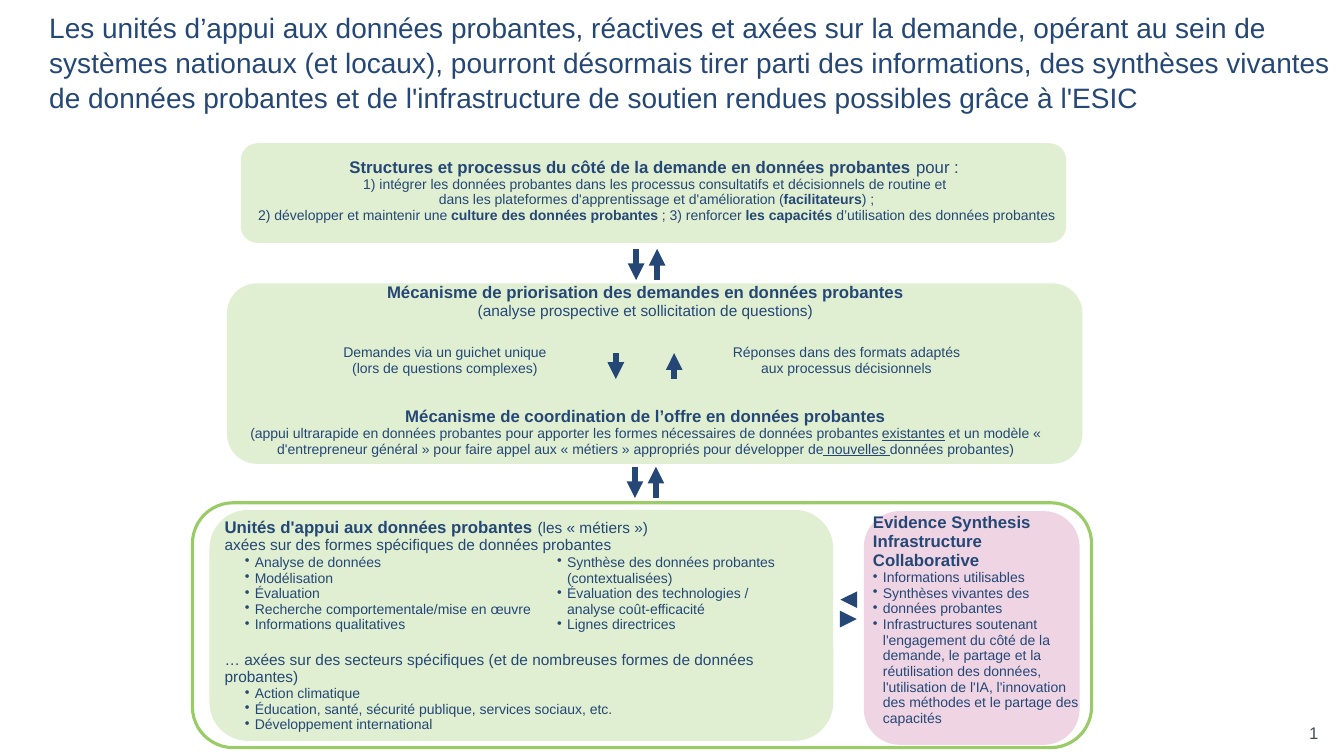
from copy import deepcopy
from dataclasses import dataclass

from lxml import etree
from pptx import Presentation
from pptx import util as u
from pptx.dml.color import RGBColor
from pptx.enum import shapes, text
from pptx.oxml import ns


@dataclass(frozen=True)
class Theme:
    """Colours, type sizes and font of the slide."""
    navy: str = "254776"
    title_navy: str = "244776"
    grey: str = "464F55"
    green: str = "99CC67"
    pink: str = "CC76A6"
    font: str = "Arial"
    title: int = 20
    head: int = 12
    sub: int = 11
    body: int = 10


@dataclass(frozen=True)
class Box:
    """A rectangle in centimetres."""
    x: float
    y: float
    w: float
    h: float

    def emu(self):
        """Return the rectangle as four lengths."""
        return [u.Cm(v) for v in (self.x, self.y, self.w, self.h)]


T = Theme()
PP = text.PP_ALIGN
NO_GRID = "{2D5ABB26-0587-4C30-8999-92F81FD0307C}"


def add_runs(p, runs, color=T.navy):
    """Add (text, size, style) runs to a paragraph; a newline breaks the line."""
    for content, size, style in runs:
        for i, part in enumerate(content.split("\n")):
            if i:
                p.add_line_break()
                p._p[-1].append(deepcopy(r._r.get_or_add_rPr()))
            if part or not i:
                r = p.add_run()
                r.text = part
                r.font.name, r.font.size = T.font, u.Pt(size)
                r.font.bold, r.font.underline = "b" in style, "u" in style
                r.font.color.rgb = RGBColor.from_string(color)


def write(tf, paragraphs, align=PP.LEFT):
    """Fill a text frame with (runs, indent) paragraphs; an indent means a bullet."""
    for i, (runs, indent) in enumerate(paragraphs):
        p = tf.paragraphs[0] if i == 0 else tf.add_paragraph()
        p.alignment = align
        if indent:
            pPr = p._p.get_or_add_pPr()
            pPr.set("marL", str(u.Cm(indent)))
            pPr.set("indent", str(-u.Cm(0.25)))
            etree.SubElement(pPr, ns.qn("a:buChar"), char="•")
        add_runs(p, runs)


def plain(*runs):
    """Return an unbulleted paragraph."""
    return list(runs), 0


def bullets(items, indent):
    """Return bulleted body paragraphs."""
    return [([(item, T.body, "")], indent) for item in items]


def add_panel(s, box, fill=None, line=None):
    """Draw a rounded panel, tinted or outlined."""
    sp = s.shapes.add_shape(shapes.MSO_SHAPE.ROUNDED_RECTANGLE, *box.emu())
    sp.shadow.inherit = False
    if fill:
        sp.fill.solid()
        sp.fill.fore_color.rgb = RGBColor.from_string(fill)
        color = next(sp._element.spPr.iter(ns.qn("a:srgbClr")))
        etree.SubElement(color, ns.qn("a:alpha"), val="30000")
    else:
        sp.fill.background()
    if line:
        sp.line.color.rgb = RGBColor.from_string(line)
        sp.line.width = u.Pt(2.25)
    else:
        sp.line.fill.background()


def add_grid(s, x, y, cols, rows):
    """Add a clear table without borders and return it."""
    box = Box(x, y, sum(cols), sum(rows))
    frame = s.shapes.add_table(len(rows), len(cols), *box.emu())
    next(frame._element.iter(ns.qn("a:tableStyleId"))).text = NO_GRID
    table = frame.table
    table.first_row = table.horz_banding = False
    for col, width in zip(table.columns, cols):
        col.width = u.Cm(width)
    for row, height in zip(table.rows, rows):
        row.height = u.Cm(height)
    for cell in table.iter_cells():
        cell.fill.background()
        cell.margin_left = cell.margin_right = u.Cm(0.05)
        cell.margin_top = cell.margin_bottom = 0
    return table


def add_arrow(s, x1, y1, x2, y2):
    """Draw an arrow to its second point."""
    c = s.shapes.add_connector(shapes.MSO_CONNECTOR.STRAIGHT,
                               *[u.Cm(v) for v in (x1, y1, x2, y2)])
    c.line.color.rgb = RGBColor.from_string(T.navy)
    c.line.width = u.Pt(4)
    etree.SubElement(c.line._get_or_add_ln(), ns.qn("a:tailEnd"), type="triangle")
    etree.SubElement(c._element.spPr, ns.qn("a:effectLst"))


def vertical_exchange(s, box):
    """Draw a down arrow and an up arrow on the sides of a box."""
    add_arrow(s, box.x, box.y, box.x, box.y + box.h)
    add_arrow(s, box.x + box.w, box.y + box.h, box.x + box.w, box.y)


def horizontal_exchange(s, box):
    """Draw a left arrow and a right arrow on the edges of a box."""
    add_arrow(s, box.x + box.w, box.y, box.x, box.y)
    add_arrow(s, box.x, box.y + box.h, box.x + box.w, box.y + box.h)


def title(s, box):
    """Fill the title placeholder."""
    sp = s.shapes.title
    sp.left, sp.top, sp.width, sp.height = box.emu()
    tf = sp.text_frame
    tf.word_wrap, tf.auto_size = True, text.MSO_AUTO_SIZE.NONE
    tf.vertical_anchor = text.MSO_ANCHOR.BOTTOM
    tf.margin_left, tf.margin_right = u.Cm(0.25), 0
    tf.margin_top, tf.margin_bottom = 0, u.Cm(0.3)
    p = tf.paragraphs[0]
    p.alignment, p.line_spacing = PP.LEFT, 1.04
    add_runs(p, [("Les unités d’appui aux données probantes, réactives et axées sur la demande, "
                  "opérant au sein de systèmes nationaux (et locaux), pourront désormais tirer "
                  "parti des informations, des synthèses vivantes de données probantes et de "
                  "l'infrastructure de soutien rendues possibles grâce à l'ESIC", T.title, "")],
             T.title_navy)


def demand(s, box):
    """Place the demand-side structures."""
    add_panel(s, box, T.green)
    cell = add_grid(s, box.x + 0.15, box.y - 0.3, [box.w - 0.15], [3.4]).cell(0, 0)
    cell.vertical_anchor = text.MSO_ANCHOR.MIDDLE
    cell.margin_bottom = u.Cm(0.41)
    write(cell.text_frame, [plain(
        ("Structures et processus du côté de la demande en données probantes ", T.head, "b"),
        ("pour : \n", T.head, ""),
        ("1) intégrer les données probantes dans les processus consultatifs et décisionnels de "
         "routine et \ndans les plateformes d'apprentissage et d'amélioration (", T.body, ""),
        ("facilitateurs", T.body, "b"),
        (") ;\n2) développer et maintenir une ", T.body, ""),
        ("culture des données probantes", T.body, "b"),
        (" ; 3) renforcer ", T.body, ""),
        ("les capacités ", T.body, "b"),
        ("d’utilisation des données probantes", T.body, ""))], PP.CENTER)


def mechanisms(s, box):
    """Place the prioritisation and coordination mechanisms."""
    add_panel(s, box, T.green)
    table = add_grid(s, box.x + 0.43, box.y, [10.12] * 2, [1.17, 1.55, 2.06])
    for row in (0, 2):
        table.cell(row, 0).merge(table.cell(row, 1))
    contents = {
        (0, 0): [plain(("Mécanisme de priorisation des demandes en données probantes\n", T.head, "b"),
                       ("(analyse prospective et sollicitation de questions)", T.sub, ""))],
        (1, 0): [plain(("Demandes via un guichet unique", T.body, "")),
                 plain(("(lors de questions complexes)", T.body, ""))],
        (1, 1): [plain(("Réponses dans des formats adaptés\naux processus décisionnels", T.body, ""))],
        (2, 0): [plain(("Mécanisme de coordination de l’offre en données probantes\n", T.head, "b"),
                       ("(appui ultrarapide en données probantes pour apporter les formes "
                        "nécessaires de données probantes ", T.body, ""),
                       ("existantes", T.body, "u"),
                       (" et un modèle « d'entrepreneur général » pour faire appel aux « métiers » "
                        "appropriés pour développer de", T.body, ""),
                       (" nouvelles ", T.body, "u"),
                       ("données probantes)", T.body, ""))],
    }
    for (row, col), paragraphs in contents.items():
        cell = table.cell(row, col)
        if row:
            cell.vertical_anchor = text.MSO_ANCHOR.MIDDLE
        write(cell.text_frame, paragraphs, PP.CENTER)
    vertical_exchange(s, Box(box.x + 9.8, box.y + 1.76, 1.47, 0.65))


def support_units(s, box):
    """Place the evidence-support units."""
    add_panel(s, box, T.green)
    table = add_grid(s, box.x + 0.33, box.y + 0.2, [8.38, 7.04], [0.93, 2.44, 1.98])
    for row in (0, 2):
        table.cell(row, 0).merge(table.cell(row, 1))
    write(table.cell(0, 0).text_frame, [
        plain(("Unités d'appui aux données probantes ", T.head, "b"),
              ("(les « métiers »)", T.sub, "")),
        plain(("axées sur des formes spécifiques de données probantes", T.sub, ""))])
    write(table.cell(1, 0).text_frame, bullets(
        ["Analyse de données", "Modélisation", "Évaluation",
         "Recherche comportementale/mise en œuvre", "Informations qualitatives"], 0.76))
    write(table.cell(1, 1).text_frame, bullets(
        ["Synthèse des données probantes (contextualisées)",
         "Évaluation des technologies / \nanalyse coût-efficacité", "Lignes directrices"], 0.25))
    write(table.cell(2, 0).text_frame, [
        plain(("… axées sur des secteurs spécifiques (et de nombreuses formes de données probantes)",
               T.sub, ""))] + bullets(
        ["Action climatique", "Éducation, santé, sécurité publique, services sociaux, etc.",
         "Développement international"], 0.76))


def collaborative(s, box):
    """Place the synthesis infrastructure collaborative."""
    add_panel(s, box, T.pink)
    cell = add_grid(s, box.x + 0.18, box.y - 0.1, [5.33], [5.87]).cell(0, 0)
    cell.margin_top = u.Cm(0.16)
    write(cell.text_frame, [
        plain(("Evidence Synthesis Infrastructure Collaborative", T.head, "b"))] + bullets(
        ["Informations utilisables", "Synthèses vivantes des", "données probantes",
         "Infrastructures soutenant l'engagement du côté de la demande, le partage et la "
         "réutilisation des données, l'utilisation de l'IA, l'innovation des méthodes et le "
         "partage des capacités"], 0.25))


def page_number(s, box):
    """Place the page number."""
    tf = s.shapes.add_textbox(*box.emu()).text_frame
    tf.word_wrap, tf.vertical_anchor = True, text.MSO_ANCHOR.MIDDLE
    tf.margin_right = 0
    add_runs(tf.paragraphs[0], [("1", T.head, "")], T.grey)


def main():
    """Build and save the slide."""
    prs = Presentation()
    prs.slide_width, prs.slide_height = u.Cm(33.87), u.Cm(19.05)
    s = prs.slides.add_slide(prs.slide_layouts[5])
    title(s, Box(0.99, 0.97, 32.87, 2.21))
    demand(s, Box(6.07, 3.61, 20.8, 2.51))
    vertical_exchange(s, Box(16.03, 6.27, 0.53, 0.79))
    mechanisms(s, Box(5.72, 7.14, 21.56, 4.55))
    vertical_exchange(s, Box(16, 11.76, 0.53, 0.79))
    add_panel(s, Box(4.85, 12.67, 22.66, 6.17), line=T.green)
    support_units(s, Box(5.28, 12.85, 15.72, 5.82))
    horizontal_exchange(s, Box(21.18, 15.11, 0.41, 0.49))
    collaborative(s, Box(21.77, 12.88, 5.44, 5.89))
    page_number(s, Box(32.74, 17.96, 0.99, 1.02))
    prs.save("out.pptx")


if __name__ == "__main__":
    main()
